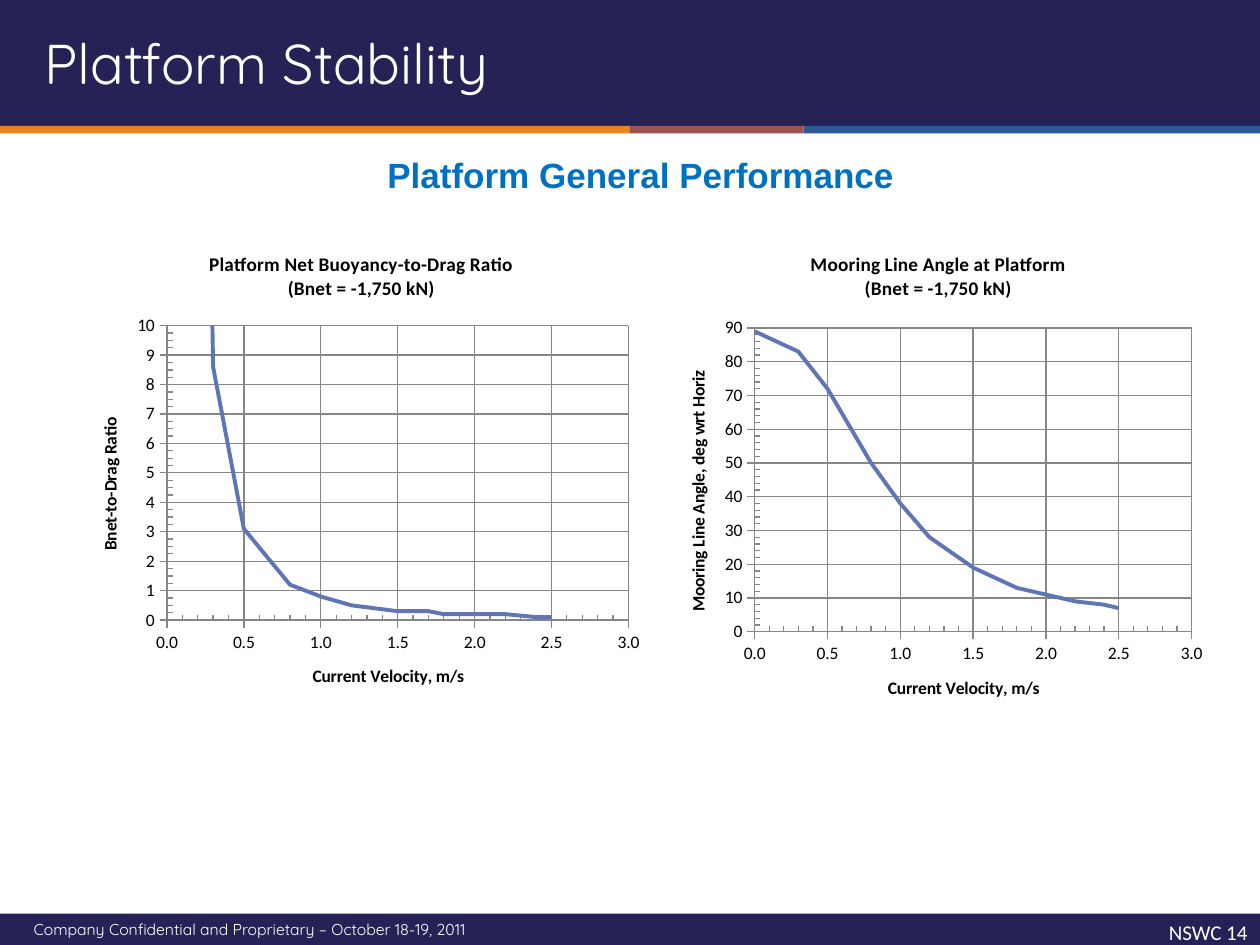
from lxml import etree
from pptx import Presentation
from pptx.chart.data import XyChartData
from pptx.dml.color import RGBColor
from pptx.enum.chart import XL_CHART_TYPE, XL_TICK_MARK
from pptx.enum.shapes import MSO_SHAPE
from pptx.enum.text import MSO_ANCHOR, PP_ALIGN
from pptx.oxml.ns import qn
from pptx.util import Cm, Pt

NAVY = RGBColor(0x27, 0x22, 0x55)
ORANGE = RGBColor(0xE6, 0x84, 0x22)
RUST = RGBColor(0x9C, 0x52, 0x52)
BLUE = RGBColor(0x2F, 0x58, 0x97)
HEADING = RGBColor(0x00, 0x70, 0xC0)
CURVE = RGBColor(0x60, 0x76, 0xB4)
GRID = RGBColor(0x86, 0x86, 0x86)
BLACK = RGBColor(0, 0, 0)
WHITE = RGBColor(0xFF, 0xFF, 0xFF)


def add_text(place, text, font, size, color, align=PP_ALIGN.LEFT, bold=False,
             anchor=MSO_ANCHOR.TOP):
    box = page.shapes.add_textbox(*[Cm(length) for length in place])
    frame = box.text_frame
    frame.word_wrap = True
    frame.vertical_anchor = anchor
    paragraph = frame.paragraphs[0]
    paragraph.alignment = align
    write_run(paragraph, text, font, size, color, bold)


def write_run(paragraph, text, font, size, color, bold):
    span = paragraph.add_run()
    span.text = text
    span.font.name = font
    span.font.size = Pt(size)
    span.font.bold = bold
    span.font.color.rgb = color


deck = Presentation()
deck.slide_width = Cm(25.4)
deck.slide_height = Cm(19.05)
page = deck.slides.add_slide(deck.slide_layouts[6])

# Header, footer and the three-colour stripe
bands = [
    (0, 18.42, 25.4, 0.63, NAVY),
    (0, 0, 25.4, 2.54, NAVY),
    (0, 2.54, 12.7, 0.15, ORANGE),
    (12.7, 2.54, 3.5, 0.15, RUST),
    (16.2, 2.54, 9.2, 0.15, BLUE),
]
for left, top, width, height, color in bands:
    band = page.shapes.add_shape(MSO_SHAPE.RECTANGLE, Cm(left), Cm(top),
                                 Cm(width), Cm(height))
    band.shadow.inherit = False
    band.fill.solid()
    band.fill.fore_color.rgb = color
    band.line.fill.background()

add_text((0.43, 18.42, 11.23, 0.63),
         "Company Confidential and Proprietary – October 18-19, 2011",
         "Quicksand", 9, WHITE)
add_text((0.64, 0.2, 23.5, 2.11), "Platform Stability", "Quicksand", 32, WHITE,
         anchor=MSO_ANCHOR.MIDDLE)
add_text((3.81, 2.97, 18.21, 1.12), "Platform General Performance", "Arial", 20,
         HEADING, PP_ALIGN.CENTER, bold=True)

# Charts against current velocity
velocities = [0, 0.3, 0.5, 0.8, 1, 1.2, 1.5, 1.6, 1.7, 1.8, 1.9, 2, 2.2, 2.4, 2.5]
charts = [
    {
        "place": (1.47, 4.65, 11.63, 9.73),
        "plot": {"x": 0.163, "y": 0.197, "w": 0.8, "h": 0.61},
        "title": "Platform Net Buoyancy-to-Drag Ratio",
        "axis": "Bnet-to-Drag Ratio",
        "scale": (10, 1, 0.25),
        "values": [100, 8.6, 3.1, 1.2, 0.8, 0.5, 0.3, 0.3, 0.3, 0.2, 0.2, 0.2,
                   0.2, 0.1, 0.1],
    },
    {
        "place": (13.34, 4.65, 11.15, 9.96),
        "plot": {"x": 0.168, "y": 0.197, "w": 0.79, "h": 0.615},
        "title": "Mooring Line Angle at Platform",
        "axis": "Mooring Line Angle, deg wrt Horiz",
        "scale": (90, 10, 2),
        "values": [89, 83, 72, 50, 38, 28, 19, 17, 15, 13, 12, 11, 9, 8, 7],
    },
]
for details in charts:
    data = XyChartData()
    points = data.add_series("Series 1")
    for velocity, value in zip(velocities, details["values"]):
        points.add_data_point(velocity, value)
    chart = page.shapes.add_chart(
        XL_CHART_TYPE.XY_SCATTER_SMOOTH_NO_MARKERS,
        *[Cm(length) for length in details["place"]], data).chart
    chart.has_legend = False
    chart.font.name = "Calibri"
    chart.font.size = Pt(10)
    chart.font.color.rgb = BLACK

    chart.has_title = True
    chart.chart_title.include_in_layout = False
    title = chart.chart_title.text_frame
    write_run(title.paragraphs[0], details["title"], "Calibri", 11, BLACK, True)
    write_run(title.add_paragraph(), "(Bnet = -1,750 kN)", "Calibri", 11, BLACK, True)

    series = chart.plots[0].series[0]
    series.smooth = True
    series.format.line.color.rgb = CURVE
    series.format.line.width = Pt(2.25)

    axes = [
        (chart.category_axis, "Current Velocity, m/s", "0.0", (3, 0.5, 0.1)),
        (chart.value_axis, details["axis"], "0", details["scale"]),
    ]
    for axis, name, number_format, (maximum, major, minor) in axes:
        axis.minimum_scale = 0
        axis.maximum_scale = maximum
        axis.major_unit = major
        axis.minor_unit = minor
        axis.major_tick_mark = XL_TICK_MARK.OUTSIDE
        axis.minor_tick_mark = XL_TICK_MARK.INSIDE
        axis.tick_labels.number_format = number_format
        axis.tick_labels.number_format_is_linked = False
        axis.has_major_gridlines = True
        for line in (axis.format.line, axis.major_gridlines.format.line):
            line.color.rgb = GRID
            line.width = Pt(0.75)
        write_run(axis.axis_title.text_frame.paragraphs[0], name, "Calibri", 10,
                  BLACK, True)

    # Fixed inner plot area
    plot_area = chart.element.find(".//" + qn("c:plotArea"))
    for old_layout in plot_area.findall(qn("c:layout")):
        plot_area.remove(old_layout)
    layout = etree.Element(qn("c:layout"))
    plot_area.insert(0, layout)
    manual = etree.SubElement(layout, qn("c:manualLayout"))
    settings = {"layoutTarget": "inner", "xMode": "edge", "yMode": "edge",
                **details["plot"]}
    for tag, setting in settings.items():
        etree.SubElement(manual, qn("c:" + tag)).set("val", str(setting))

add_text((19.48, 18.42, 5.92, 1.07), "NSWC 14", "Calibri", 12, WHITE, PP_ALIGN.RIGHT)

deck.save("out.pptx")
